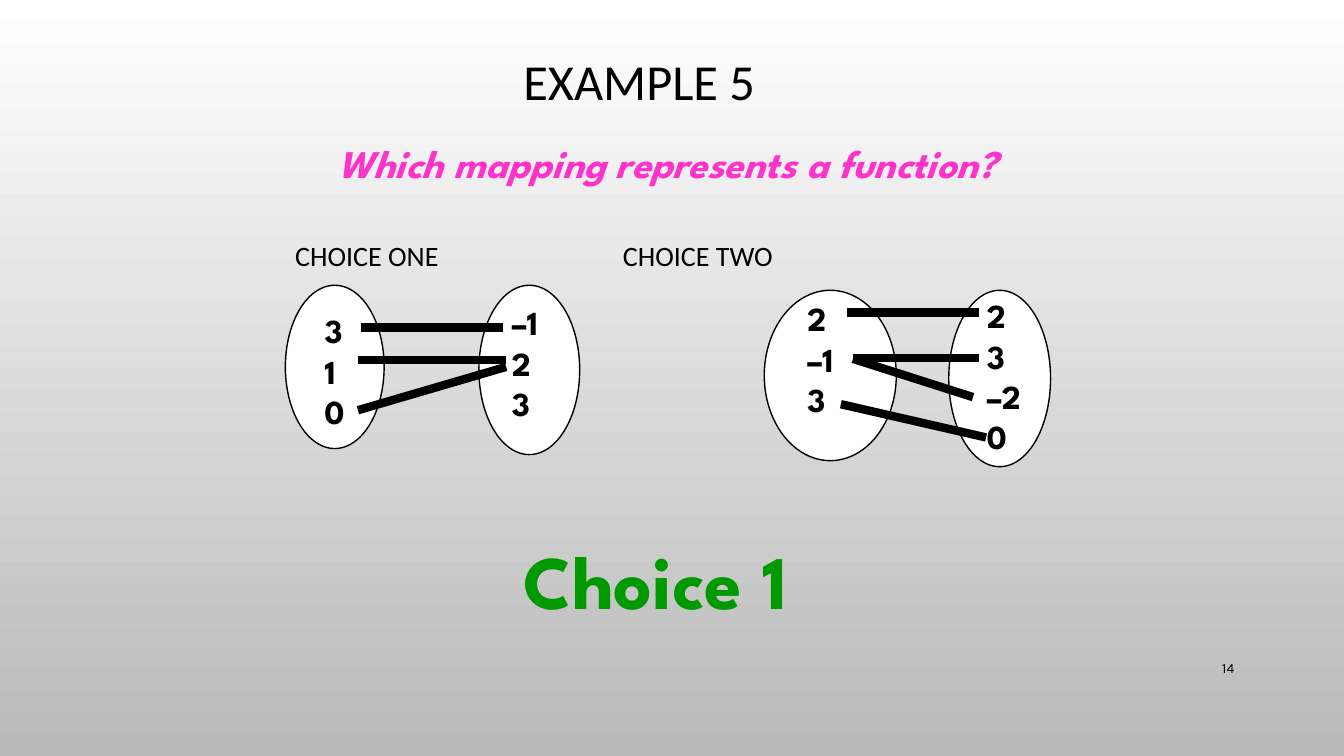
"""Build the slide asking which of two mappings represents a function."""
import pptx
import pptx.dml.color
import pptx.enum.shapes
import pptx.enum.text
import pptx.util
from lxml import etree
from pptx.util import Inches


class Theme:
    black = pptx.dml.color.RGBColor.from_string("000000")
    white = pptx.dml.color.RGBColor.from_string("FFFFFF")
    shade = pptx.dml.color.RGBColor.from_string("B9B9B9")
    pink = pptx.dml.color.RGBColor.from_string("FF33CC")
    green = pptx.dml.color.RGBColor.from_string("009900")
    plain, display, number = "Calibri", "League Spartan", "Karla"
    title, question, label, value, answer, page = 36, 28, 20, 24, 54, 10
    outline, arrow = 1, 6


ALIGN = pptx.enum.text.PP_ALIGN
ANCHOR = pptx.enum.text.MSO_ANCHOR


def add_text(shapes, box, lines, size, font, color=Theme.black, bold=False, italic=False,
             align=ALIGN.LEFT, anchor=ANCHOR.TOP, spacing=None, wrap=True):
    frame = shapes.add_textbox(*map(Inches, box)).text_frame
    frame.word_wrap = wrap
    frame.vertical_anchor = anchor
    for index, line in enumerate(lines):
        paragraph = frame.add_paragraph() if index else frame.paragraphs[0]
        paragraph.alignment = align
        paragraph.line_spacing = spacing
        run = paragraph.add_run()
        run.text = line
        run.font.name = font
        run.font.size = pptx.util.Pt(size)
        run.font.bold = bold
        run.font.italic = italic
        run.font.color.rgb = color


presentation = pptx.Presentation()
presentation.slide_width = Inches(13.33)
presentation.slide_height = Inches(7.5)
slide = presentation.slides.add_slide(presentation.slide_layouts[6])

backdrop = slide.background.fill
backdrop.gradient()
backdrop.gradient_angle = 270
for stop, color, position in zip(backdrop.gradient_stops, (Theme.white, Theme.shade), (0, 1)):
    stop.color.rgb = color
    stop.position = position

add_text(slide.shapes, (11.5, 6.43, 0.84, 0.4), ["14"], Theme.page, Theme.number,
         align=ALIGN.RIGHT, anchor=ANCHOR.MIDDLE)
add_text(slide.shapes, (2.08, 0.42, 8.52, 0.83), ["EXAMPLE 5"], Theme.title, Theme.plain,
         align=ALIGN.CENTER, anchor=ANCHOR.MIDDLE, spacing=0.9)
for label, left in (("CHOICE ONE", 2.83), ("CHOICE TWO", 6.08)):
    add_text(slide.shapes, (left, 2.25, 2.5, 0.5), [label], Theme.label, Theme.plain, spacing=1.2)

mappings = [
    {
        "ovals": [(2.83, 2.83, 0.98, 1.62), (4.75, 2.83, 1, 1.68)],
        "pairs": [(3.58, 3.25, 4.99, 3.25), (3.55, 3.57, 5.02, 3.57), (3.55, 4.07, 5.02, 3.64)],
        "values": [((3.12, 3.03, 0.39, 1.31), ["3", "1", "0"]),
                   ((4.98, 2.95, 0.56, 1.31), ["–1", "2", "3"])],
    },
    {
        "ovals": [(7.58, 2.88, 1.31, 1.69), (9.41, 2.88, 1.01, 1.75)],
        "pairs": [(8.4, 3.1, 9.71, 3.1), (8.46, 3.55, 9.71, 3.55),
                  (8.46, 3.56, 9.65, 3.94), (8.34, 4.01, 9.78, 4.34)],
        "values": [((7.91, 2.91, 0.56, 1.31), ["2", "–1", "3"]),
                   ((9.69, 2.88, 0.56, 1.72), ["2", "3", "–2", "0"])],
    },
]
for mapping in mappings:
    diagram = slide.shapes.add_group_shape().shapes
    for box in mapping["ovals"]:
        oval = diagram.add_shape(pptx.enum.shapes.MSO_SHAPE.OVAL, *map(Inches, box))
        oval.shadow.inherit = False
        oval.fill.solid()
        oval.fill.fore_color.rgb = Theme.white
        oval.line.color.rgb = Theme.black
        oval.line.width = pptx.util.Pt(Theme.outline)
    for ends in mapping["pairs"]:
        pair = diagram.add_connector(pptx.enum.shapes.MSO_CONNECTOR.STRAIGHT, *map(Inches, ends))
        pair.line.color.rgb = Theme.black
        pair.line.width = pptx.util.Pt(Theme.arrow)
        etree.SubElement(pair.element.spPr, pptx.oxml.ns.qn("a:effectLst"))
    for box, values in mapping["values"]:
        add_text(diagram, box, values, Theme.value, Theme.display, bold=True, wrap=False)

add_text(slide.shapes, (3.25, 1.33, 7.45, 0.57), ["Which mapping represents a function?"],
         Theme.question, Theme.display, Theme.pink, bold=True, italic=True)
add_text(slide.shapes, (4.25, 5.25, 4.5, 1.33), ["Choice 1"], Theme.answer, Theme.display,
         Theme.green, bold=True, align=ALIGN.CENTER)

presentation.save("out.pptx")
